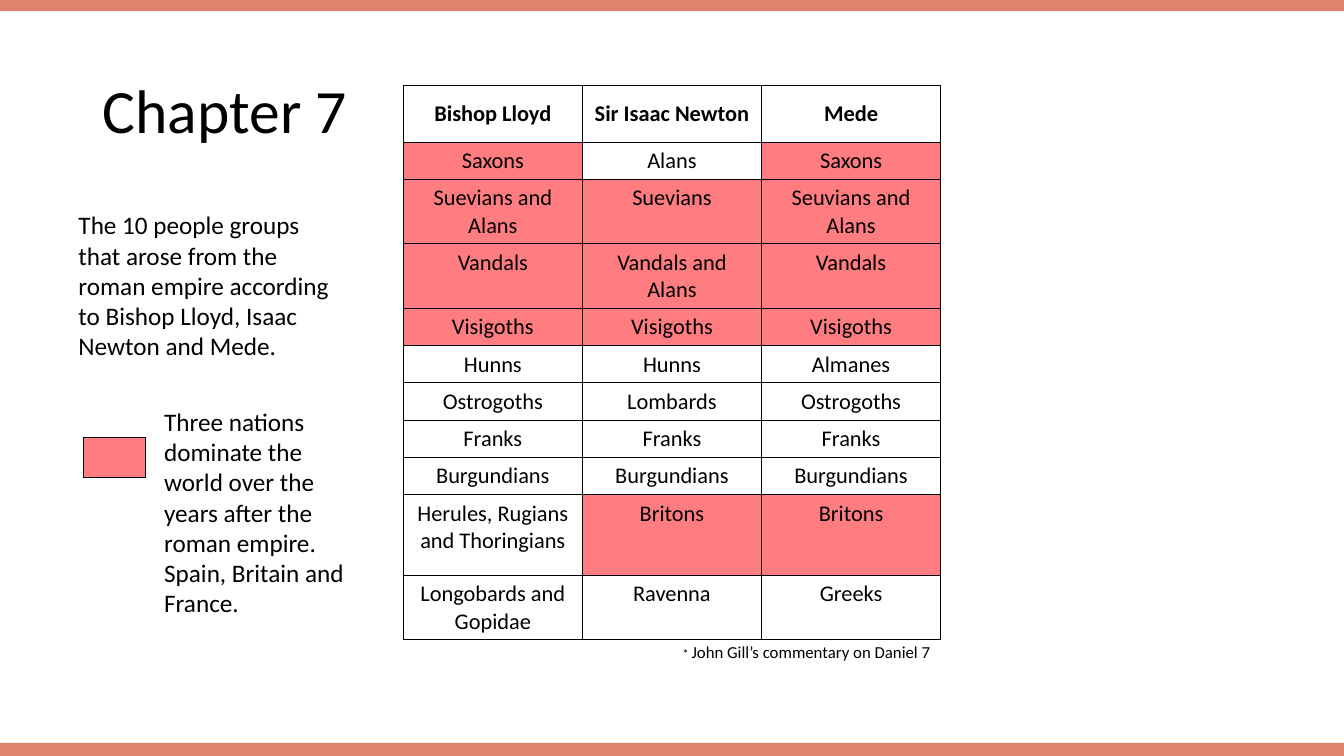
from lxml import etree
from pptx import Presentation
from pptx.dml.color import RGBColor
from pptx.enum.shapes import MSO_SHAPE
from pptx.enum.text import MSO_ANCHOR, PP_ALIGN
from pptx.oxml.ns import qn
from pptx.util import Inches, Pt

RECT = MSO_SHAPE.RECTANGLE
TOP, MIDDLE = MSO_ANCHOR.TOP, MSO_ANCHOR.MIDDLE
LEFT, CENTER = PP_ALIGN.LEFT, PP_ALIGN.CENTER

BLACK = RGBColor(0x00, 0x00, 0x00)
WHITE = RGBColor(0xFF, 0xFF, 0xFF)
ORANGE = RGBColor(0xD2, 0x47, 0x26)
PINK = RGBColor(0xFF, 0x7C, 0x80)
FONT = "Calibri"
SLIDE_W, SLIDE_H = 13.33, 7.5

HEADERS = ["Bishop Lloyd", "Sir Isaac Newton", "Mede"]
# Row height, the three names, and the columns that are highlighted
NATIONS = [
    (0.37, ["Saxons", "Alans", "Saxons"], {0, 2}),
    (0.64, ["Suevians and Alans", "Suevians", "Seuvians and Alans"], {0, 1, 2}),
    (0.64, ["Vandals", "Vandals and Alans", "Vandals"], {0, 1, 2}),
    (0.37, ["Visigoths", "Visigoths", "Visigoths"], {0, 1, 2}),
    (0.37, ["Hunns", "Hunns", "Almanes"], set()),
    (0.37, ["Ostrogoths", "Lombards", "Ostrogoths"], set()),
    (0.37, ["Franks", "Franks", "Franks"], set()),
    (0.37, ["Burgundians", "Burgundians", "Burgundians"], set()),
    (0.8, ["Herules, Rugians and Thoringians", "Britons", "Britons"], {1, 2}),
    (0.64, ["Longobards and Gopidae", "Ravenna", "Greeks"], set()),
]


def add_run(p, text, size, bold=False):
    r = p.add_run()
    r.text = text
    r.font.name, r.font.size, r.font.bold = FONT, Pt(size), bold
    r.font.color.rgb = BLACK


def add_rect(slide, x, y, w, h, color):
    sp = slide.shapes.add_shape(RECT, Inches(x), Inches(y), Inches(w), Inches(h))
    sp.shadow.inherit = False
    sp.fill.solid()
    sp.fill.fore_color.rgb = color
    return sp


def add_text(slide, x, y, w, h, paragraphs, anchor=TOP, spacing=1.0):
    """Each paragraph is a list of (text, size) runs."""
    box = slide.shapes.add_textbox(Inches(x), Inches(y), Inches(w), Inches(h))
    tf = box.text_frame
    tf.word_wrap = True
    tf.vertical_anchor = anchor
    for i, runs in enumerate(paragraphs):
        p = tf.paragraphs[0] if i == 0 else tf.add_paragraph()
        p.alignment, p.line_spacing = LEFT, spacing
        for text, size in runs:
            add_run(p, text, size)


def add_bar(slide, y, h):
    bar = add_rect(slide, 0, y, SLIDE_W, h, ORANGE)
    bar.line.fill.background()
    color = bar.fill._xPr.find(".//" + qn("a:srgbClr"))
    etree.SubElement(color, qn("a:alpha"), val="67000")


def set_borders(cell, width):
    tcPr = cell._tc.get_or_add_tcPr()
    for side in ("a:lnL", "a:lnR", "a:lnT", "a:lnB"):
        ln = etree.SubElement(tcPr, qn(side), w=str(Pt(width)))
        fill = etree.SubElement(ln, qn("a:solidFill"))
        etree.SubElement(fill, qn("a:srgbClr"), val=str(BLACK))


def fill_cell(cell, text, color, header):
    set_borders(cell, 1)  # borders come before the fill in the XML
    cell.fill.solid()
    cell.fill.fore_color.rgb = color
    cell.vertical_anchor = MIDDLE if header else TOP
    p = cell.text_frame.paragraphs[0]
    p.alignment = CENTER
    add_run(p, text, 16, header)


def add_nations_table(slide, x, y, w):
    rows = [(0.56, HEADERS, set())] + NATIONS
    height = sum(row[0] for row in rows)
    table = slide.shapes.add_table(len(rows), len(HEADERS), Inches(x), Inches(y),
                                   Inches(w), Inches(height)).table
    for i, (row_h, names, marked) in enumerate(rows):
        table.rows[i].height = Inches(row_h)
        for j, name in enumerate(names):
            color = PINK if j in marked else WHITE
            fill_cell(table.cell(i, j), name, color, i == 0)


def add_legend(slide, x, y):
    swatch = add_rect(slide, x, y + 0.36, 0.61, 0.4, PINK)
    swatch.line.color.rgb = BLACK
    swatch.line.width = Pt(0.75)
    add_text(slide, x + 0.7, y, 2.07, 2.22, [
        [("Three nations dominate the world over the years after the roman empire.", 18)],
        [("Spain, Britain and France.", 18)],
    ])


def main():
    prs = Presentation()
    prs.slide_width, prs.slide_height = Inches(SLIDE_W), Inches(SLIDE_H)
    slide = prs.slides.add_slide(prs.slide_layouts[6])

    # Top and bottom bars
    add_bar(slide, 0, 0.11)
    add_bar(slide, 7.37, 0.13)

    # Title and footnote
    add_text(slide, 0.92, 0.4, 11.5, 1.45, [[("Chapter 7", 44)]], MIDDLE, 0.9)
    add_text(slide, 6.67, 6.34, 2.69, 0.44,
             [[("* ", 9), ("John Gill’s commentary on Daniel 7", 12)]], spacing=0.9)

    # Table, introduction and legend
    add_nations_table(slide, 4, 0.85, 5.33)
    add_text(slide, 0.68, 2.03, 2.78, 1.62, [[(
        "The 10 people groups that arose from the roman empire according to "
        "Bishop Lloyd, Isaac Newton and Mede.", 18)]])
    add_legend(slide, 0.83, 3.98)

    prs.save("out.pptx")


if __name__ == "__main__":
    main()
